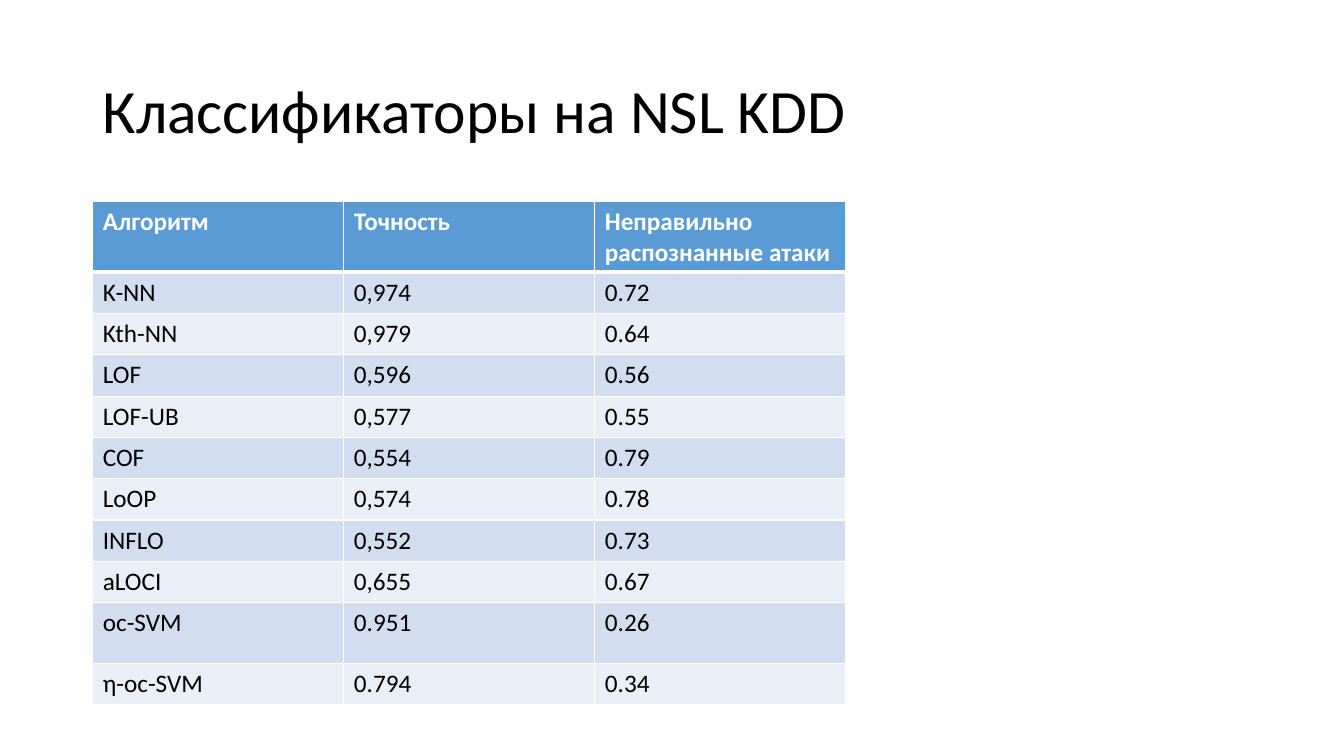
"""Build a slide with a table of classifier results on NSL KDD."""
from lxml.etree import SubElement
from pptx import Presentation
from pptx.dml.color import RGBColor
from pptx.enum.text import MSO_ANCHOR
from pptx.oxml.ns import qn
from pptx.util import Inches, Pt

FONT = "Calibri"
COLORS = {"black": "000000", "white": "FFFFFF", "header": "5B9BD5",
          "odd": "D2DEEF", "even": "EAEFF7"}
RESULTS = [
    ("Алгоритм", "Точность", "Неправильно распознанные атаки"),
    ("K-NN", "0,974", "0.72"),
    ("Kth-NN", "0,979", "0.64"),
    ("LOF", "0,596", "0.56"),
    ("LOF-UB", "0,577", "0.55"),
    ("COF", "0,554", "0.79"),
    ("LoOP", "0,574", "0.78"),
    ("INFLO", "0,552", "0.73"),
    ("aLOCI", "0,655", "0.67"),
    ("oc-SVM", "0.951", "0.26"),
    ("η-oc-SVM", "0.794", "0.34"),
]
ROW_HEIGHTS = [0.69] + [0.41] * 8 + [0.6, 0.41]


def style_text(paragraph, size, color, bold=False):
    paragraph.font.name = FONT
    paragraph.font.size = Pt(size)
    paragraph.font.bold = bold
    paragraph.font.color.rgb = RGBColor.from_string(COLORS[color])


def add_border(cell, side, width):
    line = SubElement(cell._tc.get_or_add_tcPr(), qn(f"a:{side}"), w=str(Pt(width)))
    fill = SubElement(line, qn("a:solidFill"))
    SubElement(fill, qn("a:srgbClr"), val=COLORS["white"])


prs = Presentation()
prs.slide_width = Inches(13.33)
prs.slide_height = Inches(7.5)
slide = prs.slides.add_slide(prs.slide_layouts[6])

title = slide.shapes.add_textbox(Inches(0.92), Inches(0.4), Inches(11.5), Inches(1.45))
title.text_frame.word_wrap = True
title.text_frame.vertical_anchor = MSO_ANCHOR.MIDDLE
heading = title.text_frame.paragraphs[0]
heading.text = "Классификаторы на NSL KDD"
heading.line_spacing = 0.9
style_text(heading, 44, "black")

table = slide.shapes.add_table(len(RESULTS), 3, Inches(0.92), Inches(2),
                               Inches(7.47), Inches(sum(ROW_HEIGHTS))).table
for column in table.columns:
    column.width = Inches(2.49)

for row_index, (result, height) in enumerate(zip(RESULTS, ROW_HEIGHTS)):
    table.rows[row_index].height = Inches(height)
    is_header = row_index == 0
    band = "header" if is_header else "odd" if row_index % 2 else "even"
    for column_index, value in enumerate(result):
        cell = table.cell(row_index, column_index)
        cell.text = value
        style_text(cell.text_frame.paragraphs[0], 18,
                   "white" if is_header else "black", is_header)
        for side in ("lnL", "lnR", "lnT", "lnB"):
            thick = (is_header and side == "lnB") or (row_index == 1 and side == "lnT")
            add_border(cell, side, 3 if thick else 1)
        cell.fill.solid()
        cell.fill.fore_color.rgb = RGBColor.from_string(COLORS[band])

prs.save("out.pptx")
